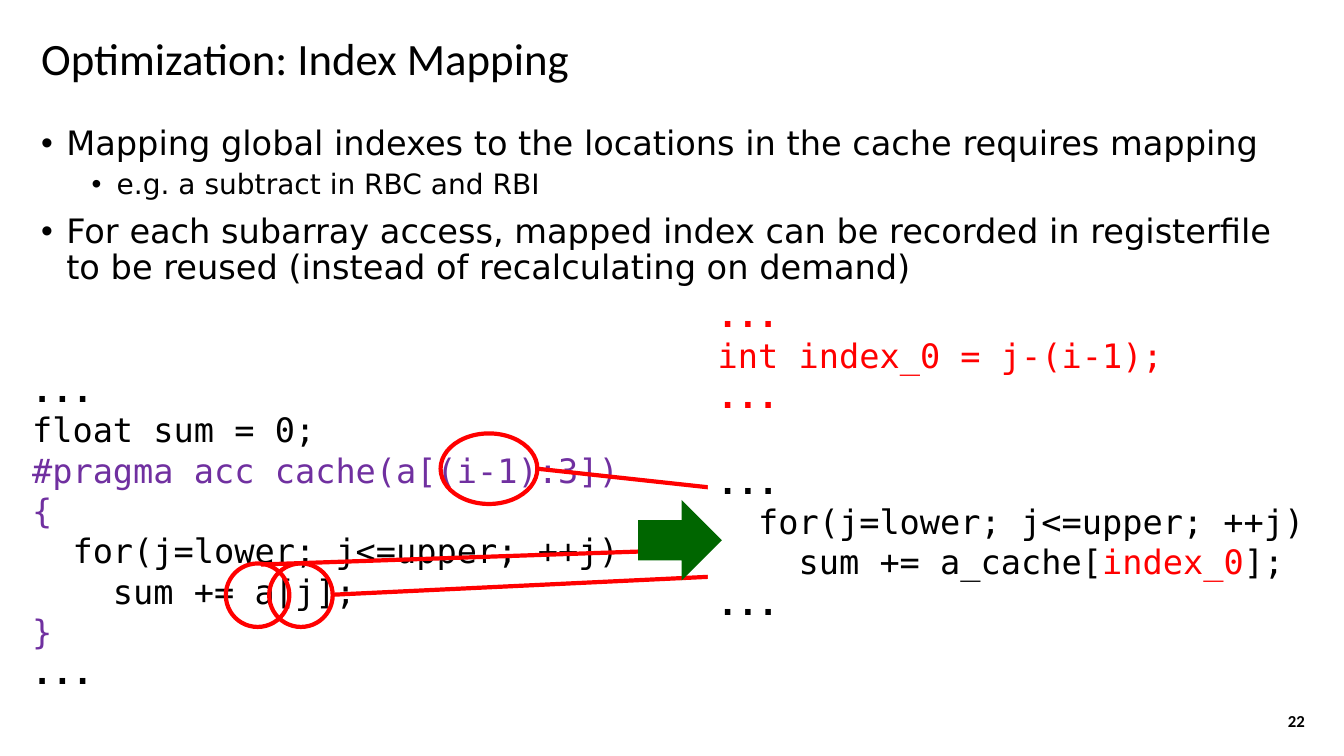
from lxml import etree
from pptx import Presentation
from pptx.dml.color import RGBColor
from pptx.enum.shapes import MSO_CONNECTOR, MSO_SHAPE
from pptx.enum.text import MSO_ANCHOR, MSO_AUTO_SIZE, PP_ALIGN
from pptx.oxml.ns import qn
from pptx.util import Inches, Pt

BLACK = RGBColor(0x00, 0x00, 0x00)
WHITE = RGBColor(0xFF, 0xFF, 0xFF)
RED = RGBColor(0xFF, 0x00, 0x00)
PURPLE = RGBColor(0x70, 0x30, 0xA0)
GREEN = RGBColor(0x00, 0x66, 0x00)

HEAD, BODY, MONO = "Calibri", "DejaVu Sans", "DejaVu Sans Mono"
LEFT, RIGHT = PP_ALIGN.LEFT, PP_ALIGN.RIGHT
TOP, MIDDLE = MSO_ANCHOR.TOP, MSO_ANCHOR.MIDDLE
FIT = MSO_AUTO_SIZE.SHAPE_TO_FIT_TEXT
STRAIGHT = MSO_CONNECTOR.STRAIGHT
OVAL, RECT, ARROW = MSO_SHAPE.OVAL, MSO_SHAPE.RECTANGLE, MSO_SHAPE.RIGHT_ARROW

DOTS = "..."
LOOP = "  for(j=lower; j<=upper; ++j)"


class Deck:
    def __init__(self):
        self.file = Presentation()
        self.file.slide_width = Inches(13.33)
        self.file.slide_height = Inches(7.5)
        self.slide = self.file.slides.add_slide(self.file.slide_layouts[6])

    def style(self, font, face, size, color, bold=False):
        font.name, font.size, font.bold = face, Pt(size), bold
        font.color.rgb = color

    def box(self, at, anchor=TOP):
        """Add a wrapping text box and return its text frame."""
        frame = self.slide.shapes.add_textbox(*map(Inches, at)).text_frame
        frame.word_wrap = True
        frame.vertical_anchor = anchor
        return frame

    def label(self, at, text, size, bold=False, align=LEFT, space=1.0):
        frame = self.box(at, MIDDLE)
        frame.text = text
        para = frame.paragraphs[0]
        para.alignment, para.line_spacing = align, space
        self.style(para.runs[0].font, HEAD, size, BLACK, bold)

    def bullets(self, at, items):
        frame = self.box(at)
        frame.text = "\n".join(text for text, level in items)
        for para, (text, level) in zip(frame.paragraphs, items):
            para.level, para.line_spacing = level, 0.9
            para.space_before = Pt(5 if level else 10)
            self.style(para.runs[0].font, BODY, 20 if level else 24, BLACK)
            props = para._p.get_or_add_pPr()
            props.set("marL", str(Inches(0.25 + 0.5 * level)))
            props.set("indent", str(Inches(-0.25)))
            etree.SubElement(props, qn("a:buFont")).set("typeface", "Arial")
            etree.SubElement(props, qn("a:buChar")).set("char", "•")

    def code(self, at, lines, fill=None):
        """Set code lines, each a list of (text, colour) parts; dots are bold."""
        if fill is None:
            frame = self.box(at)
        else:
            frame = self.shape(RECT, at, fill).text_frame
            frame.vertical_anchor = TOP
        frame.word_wrap = False
        frame.auto_size = FIT
        for i, parts in enumerate(lines):
            para = frame.add_paragraph() if i else frame.paragraphs[0]
            para.alignment = LEFT
            for text, color in parts:
                run = para.add_run()
                run.text = text
                self.style(run.font, MONO, 24, color, text == DOTS)

    def shape(self, kind, at, fill=None, line=None):
        item = self.slide.shapes.add_shape(kind, *map(Inches, at))
        item.shadow.inherit = False
        if fill is None:
            item.fill.background()
        else:
            item.fill.solid()
            item.fill.fore_color.rgb = fill
        if line is None:
            item.line.fill.background()
        else:
            item.line.color.rgb = line
            item.line.width = Pt(3)
        return item

    def link(self, start, end):
        """Draw a red arrow between two points."""
        item = self.slide.shapes.add_connector(
            STRAIGHT, *map(Inches, start + end))
        item.line.color.rgb = RED
        item.line.width = Pt(3)
        etree.SubElement(item.line._get_or_add_ln(),
                         qn("a:tailEnd")).set("type", "arrow")
        etree.SubElement(item._element.spPr, qn("a:effectLst"))


def main():
    deck = Deck()
    deck.label((0.31, 0.16, 12.73, 0.89), "Optimization: Index Mapping", 32,
               space=0.9)
    deck.bullets((0.31, 1.21, 12.73, 5.55), [
        ("Mapping global indexes to the locations in the cache "
         "requires mapping", 0),
        ("e.g. a subtract in RBC and RBI", 1),
        ("For each subarray access, mapped index can be recorded in "
         "registerfile to be reused (instead of recalculating on demand)", 0),
    ])
    deck.label((9.42, 6.95, 3.62, 0.4), "22", 12, bold=True, align=RIGHT)

    deck.code((0.22, 3.61, 6.1, 3.33), [
        [(DOTS, BLACK)],
        [("float sum = 0;", BLACK)],
        [("#pragma acc cache(a[(i-1):3])", PURPLE)],
        [("{", PURPLE)],
        [(LOOP, BLACK)],
        [("    sum += a[j];", BLACK)],
        [("}", PURPLE)],
        [(DOTS, BLACK)],
    ])

    for ring in ((2.67, 5.59, 0.63, 0.63), (4.37, 4.3, 0.96, 0.7),
                 (2.24, 5.59, 0.63, 0.63)):
        deck.shape(OVAL, ring, line=RED)
    for start, end in (((5.33, 4.65), (11.49, 5.32)),
                       ((3.3, 5.9), (10.65, 5.55)),
                       ((2.59, 5.6), (9.32, 5.37))):
        deck.link(start, end)

    deck.code((7.02, 2.87, 4.68, 1.31), [
        [(DOTS, RED)],
        [("int index_0 = j-(i-1);", RED)],
        [(DOTS, RED)],
    ])
    deck.code((7.02, 4.52, 6.1, 1.72), [
        [(DOTS, BLACK)],
        [(LOOP, BLACK)],
        [("    sum += a_cache[", BLACK), ("index_0", RED), ("];", BLACK)],
        [(DOTS, BLACK)],
    ], fill=WHITE)
    deck.shape(ARROW, (6.33, 4.96, 0.83, 0.8), fill=GREEN)

    deck.file.save("out.pptx")


if __name__ == "__main__":
    main()
